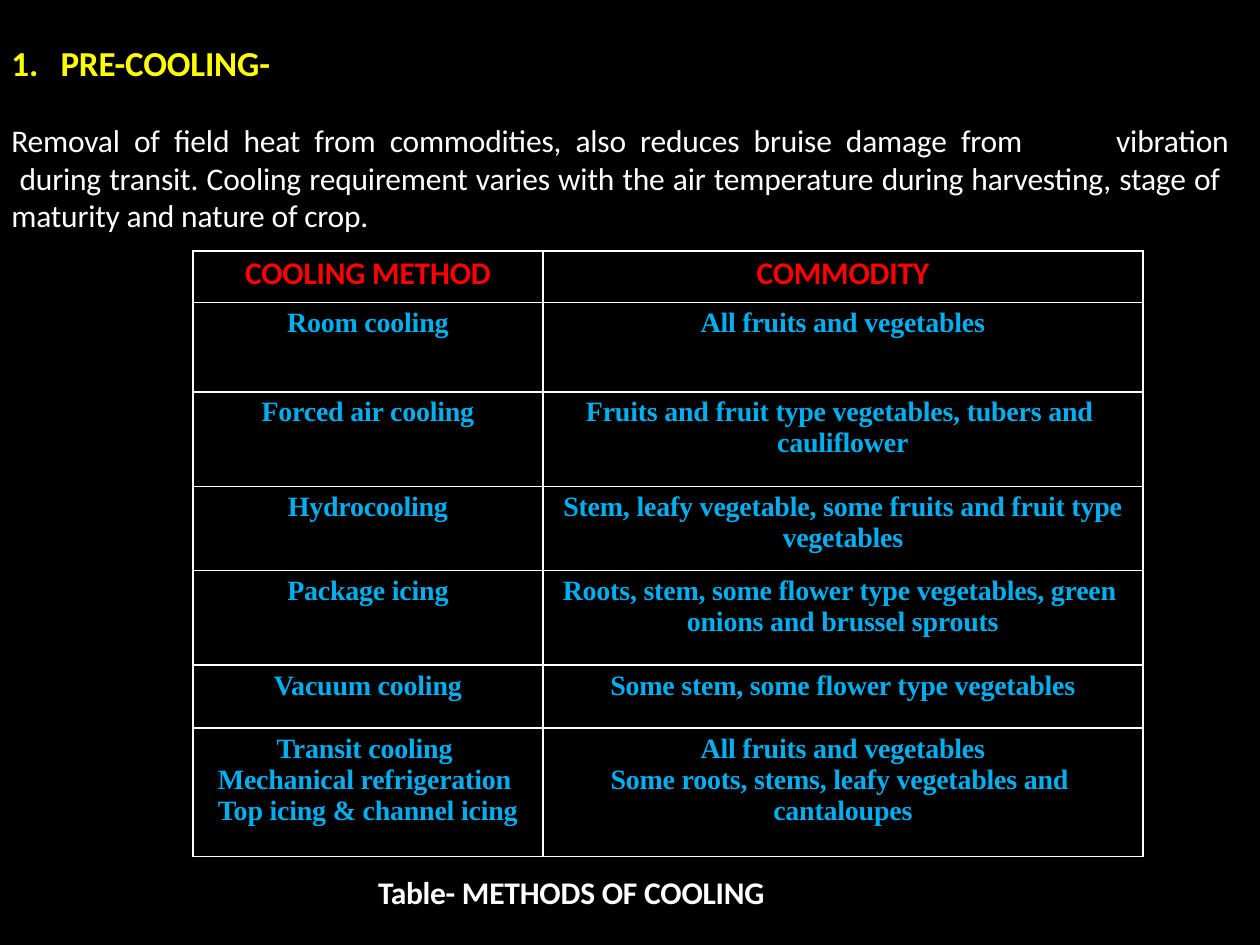
from lxml.etree import SubElement
from pptx import Presentation
from pptx.dml.color import RGBColor
from pptx.enum.text import MSO_ANCHOR as Anchor, MSO_AUTO_SIZE as AutoSize, PP_ALIGN as Align
from pptx.oxml.ns import qn
from pptx.util import Inches, Pt

BLACK = RGBColor(0x00, 0x00, 0x00)
WHITE = RGBColor(0xFF, 0xFF, 0xFF)
YELLOW = RGBColor(0xFF, 0xFF, 0x00)
RED = RGBColor(0xFF, 0x00, 0x00)
BLUE = RGBColor(0x00, 0xAF, 0xEF)

# The slide is a grid of 100 columns by 75 rows
WIDTH, HEIGHT = Inches(10), Inches(7.5)
COL, ROW = WIDTH / 100, HEIGHT / 75

COLUMN_WIDTHS = [27.8, 47.6]
ROW_HEIGHTS = [4.1, 7.1, 7.5, 6.7, 7.5, 5, 10.2]
METHODS = [
    (["COOLING METHOD"], ["COMMODITY"]),
    (["Room cooling"], ["All fruits and vegetables"]),
    (["Forced air cooling"], ["Fruits and fruit type vegetables, tubers and  cauliflower"]),
    (["Hydrocooling"], ["Stem, leafy vegetable, some fruits and fruit type", "vegetables"]),
    (["Package icing"],
     ["Roots, stem, some flower type vegetables, green  onions and brussel sprouts"]),
    (["Vacuum cooling"], ["Some stem, some flower type vegetables"]),
    (["Transit cooling  Mechanical refrigeration  Top icing & channel icing"],
     ["All fruits and vegetables", "Some roots, stems, leafy vegetables and  cantaloupes"]),
]
LAST_ROW_INSETS = [1.8, 5.2]
INTRO = ("Removal  of  field  heat  from  commodities,  also  reduces  bruise  damage  from\t"
         "vibration  during transit. Cooling requirement varies with the air temperature "
         "during harvesting, stage of  maturity and nature of crop.")


def grid_box(left, top, width, height):
    return int(left * COL), int(top * ROW), int(width * COL), int(height * ROW)


def add_run(p, text, size, color, font="Calibri", bold=False, spacing=-10):
    r = p.add_run()
    r.text = text
    r.font.size, r.font.name, r.font.bold = Pt(size), font, bold
    r.font.color.rgb = color
    r.font._element.set("spc", str(spacing))


def add_tab(p, position):
    tabs = SubElement(p._p.get_or_add_pPr(), qn("a:tabLst"))
    SubElement(tabs, qn("a:tab"), pos=str(int(position * COL)), algn="l")


def prepare_text(sp, align, before):
    tf = sp.text_frame
    tf.word_wrap, tf.auto_size = True, AutoSize.NONE
    tf.vertical_anchor = Anchor.TOP
    tf.margin_left = tf.margin_right = tf.margin_bottom = 0
    tf.margin_top = Inches(0.01)
    p = tf.paragraphs[0]
    p.alignment, p.space_before = align, Pt(before)
    return p


def place_title(s, box):
    sp = s.shapes.title
    sp.left, sp.top, sp.width, sp.height = box
    p = prepare_text(sp, Align.LEFT, 1.1)
    add_tab(p, 3.9)
    add_run(p, "1.\t", 20, YELLOW, bold=True, spacing=0)
    add_run(p, "PRE-COOLING-", 20, YELLOW, bold=True)


def place_intro(s, box):
    p = prepare_text(s.shapes.add_textbox(*box), Align.JUSTIFY, 1)
    add_tab(p, 87.4)
    add_run(p, INTRO, 18, WHITE)


def place_caption(s, box):
    p = prepare_text(s.shapes.add_textbox(*box), Align.LEFT, 1)
    add_run(p, "Table- ", 18, WHITE, bold=True, spacing=-20)
    add_run(p, "METHODS OF COOLING", 18, WHITE, bold=True)


def add_borders(cell):
    tc_pr = cell._tc.get_or_add_tcPr()
    for i, side in enumerate(("lnL", "lnR", "lnT", "lnB")):
        line = tc_pr.makeelement(qn(f"a:{side}"), {"w": str(Pt(1))})
        fill = SubElement(line, qn("a:solidFill"))
        SubElement(fill, qn("a:srgbClr"), val=str(WHITE))
        tc_pr.insert(i, line)


def fill_cell(cell, lines, header, inset):
    cell.fill.solid()
    cell.fill.fore_color.rgb = BLACK
    add_borders(cell)
    cell.margin_left = cell.margin_right = int(inset * COL)
    cell.margin_top, cell.margin_bottom = Inches(0.03 if header else 0.04), 0
    tf = cell.text_frame
    for i, text in enumerate(lines):
        p = tf.add_paragraph() if i else tf.paragraphs[0]
        p.alignment = Align.CENTER
        p.space_before = Pt(0 if i else 2.4 if header else 3.1)
        if header:
            add_run(p, text, 18, RED, bold=True)
        else:
            add_run(p, text, 16, BLUE, "Times New Roman", True)


def place_table(s, box):
    table = s.shapes.add_table(len(ROW_HEIGHTS), len(COLUMN_WIDTHS), *box).table
    table.first_row = table.horz_banding = False
    for column, width in zip(table.columns, COLUMN_WIDTHS):
        column.width = int(width * COL)
    for i, (height, texts) in enumerate(zip(ROW_HEIGHTS, METHODS)):
        table.rows[i].height = int(height * ROW)
        insets = LAST_ROW_INSETS if i == len(METHODS) - 1 else [0, 0]
        for j, lines in enumerate(texts):
            fill_cell(table.cell(i, j), lines, i == 0, insets[j])


def main():
    prs = Presentation()
    prs.slide_width, prs.slide_height = WIDTH, HEIGHT
    s = prs.slides.add_slide(prs.slide_layouts[5])
    s.background.fill.solid()
    s.background.fill.fore_color.rgb = BLACK

    place_title(s, grid_box(0.9, 3.2, 20.9, 3.6))
    place_intro(s, grid_box(0.9, 9.5, 96.6, 9.3))
    place_table(s, grid_box(15.3, 19.9, sum(COLUMN_WIDTHS), sum(ROW_HEIGHTS)))
    place_caption(s, grid_box(30, 69.2, 31.9, 3.3))
    prs.save("out.pptx")


if __name__ == "__main__":
    main()
